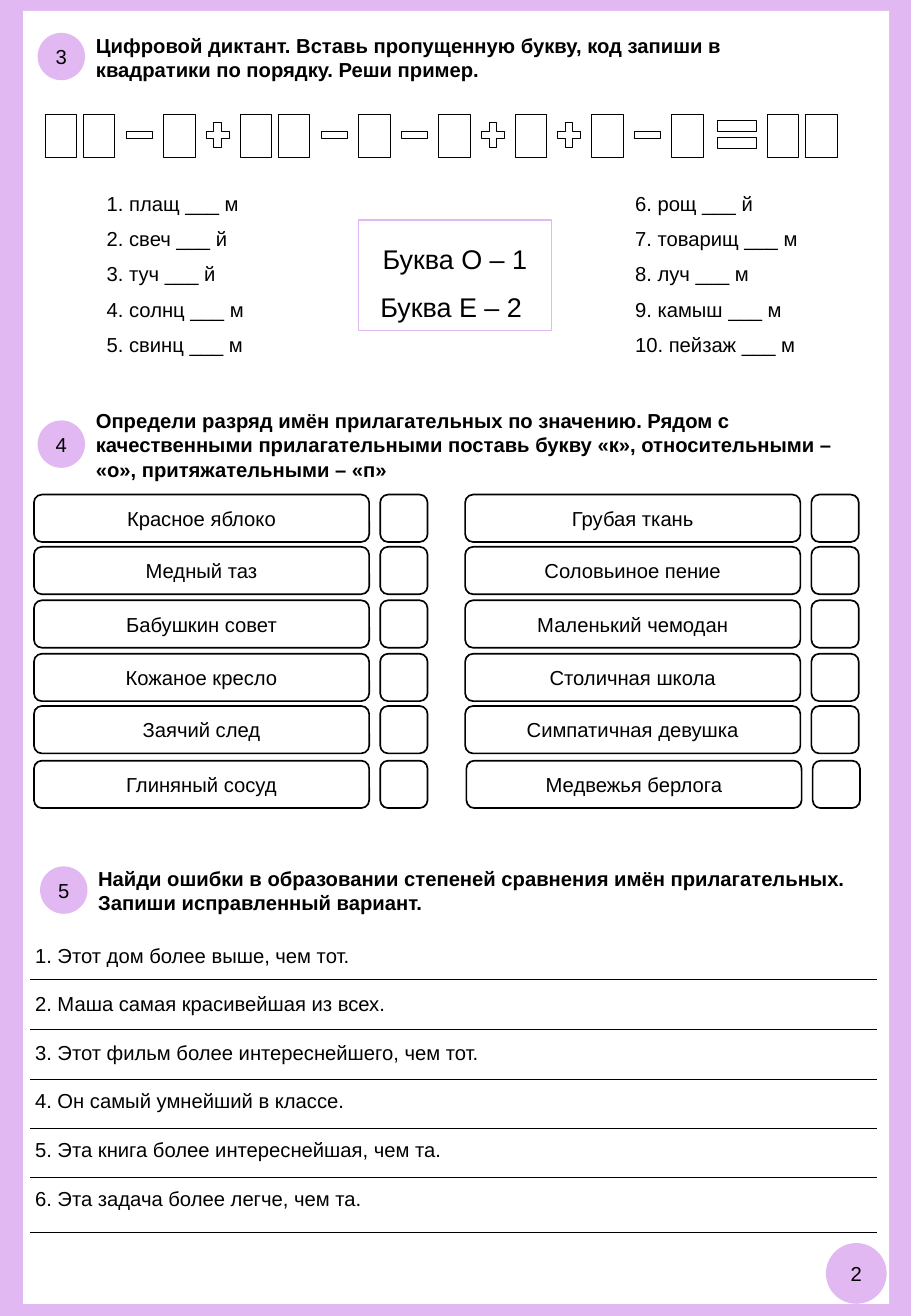
from dataclasses import dataclass

from lxml import etree
from pptx import Presentation
from pptx import util as u
from pptx.dml.color import RGBColor
from pptx.enum import shapes, text
from pptx.oxml import ns

HEADINGS = [
    ("3", (31, 27), (69, 22, 585, 50),
     "Цифровой диктант. Вставь пропущенную букву, код запиши в квадратики по порядку. Реши пример."),
    ("4", (31, 346), (69, 331, 661, 71),
     "Определи разряд имён прилагательных по значению. Рядом с качественными прилагательными "
     "поставь букву «к», относительными – «о», притяжательными – «п»"),
    ("5", (33, 713), (71, 708, 661, 50),
     "Найди ошибки в образовании степеней сравнения имён прилагательных. Запиши исправленный вариант."),
]
EQUATION = "□□-□+□□-□-□+□+□-□=□□"
LETTER_CODES = ["Буква О – 1", "Буква Е – 2 "]
WORD_COLUMNS = [
    ((78, 143, 201, 157),
     ["1. плащ ___ м", "2. свеч ___ й", "3. туч ___ й", "4. солнц ___ м", "5. свинц ___ м"]),
    ((513, 143, 231, 157),
     ["6. рощ ___ й", "7. товарищ ___ м", "8. луч ___ м", "9. камыш ___ м", "10. пейзаж ___ м"]),
]
PHRASE_ROWS = [
    (407, 383, "Красное яблоко", "Грубая ткань"),
    (450, 383, "Медный таз", "Соловьиное пение"),
    (494, 383, "Бабушкин совет", "Маленький чемодан"),
    (538, 383, "Кожаное кресло", "Столичная школа"),
    (581, 383, "Заячий след", "Симпатичная девушка"),
    (626, 384, "Глиняный сосуд", "Медвежья берлога"),
]
SENTENCES = [
    "1. Этот дом более выше, чем тот.",
    "2. Маша самая красивейшая из всех.",
    "3. Этот фильм более интереснейшего, чем тот.",
    "4. Он самый умнейший в классе.",
    "5. Эта книга более интереснейшая, чем та.",
    "6. Эта задача более легче, чем та.",
]
ANSWER_LINES = [806, 847, 888, 929, 969, 1014]
PAGE_NUMBER = "2"


@dataclass(frozen=True)
class Theme:
    lilac: RGBColor = RGBColor(0xE1, 0xB8, 0xF2)
    white: RGBColor = RGBColor(0xFF, 0xFF, 0xFF)
    black: RGBColor = RGBColor(0, 0, 0)
    font: str = "Arial"
    body: int = 12
    code: int = 16


THEME = Theme()
PX = 9144
KIND = shapes.MSO_SHAPE
SYMBOLS = {
    "□": (KIND.RECTANGLE, 94, 26, 35, 5.5),
    "-": (KIND.MATH_MINUS, 98, 29, 26, 5.5),
    "+": (KIND.MATH_PLUS, 97, 26, 28, 5.5),
    "=": (KIND.MATH_EQUAL, 91, 44, 39, 3),
}


def emu(*lengths):
    return [u.Emu(round(length * PX)) for length in lengths]


def write(shape, lines, size=THEME.body, bold=False, spacing=1.0,
          align=text.PP_ALIGN.LEFT, anchor=text.MSO_ANCHOR.TOP):
    frame = shape.text_frame
    frame.word_wrap = True
    frame.vertical_anchor = anchor
    frame.text = "\n".join(lines)
    for paragraph in frame.paragraphs:
        paragraph.alignment = align
        paragraph.line_spacing = spacing
        for run in paragraph.runs:
            run.font.name = THEME.font
            run.font.size = u.Pt(size)
            run.font.bold = bold
            run.font.color.rgb = THEME.black


def write_centred(shape, label):
    frame = shape.text_frame
    frame.margin_left = frame.margin_right = 0
    write(shape, [label], align=text.PP_ALIGN.CENTER, anchor=text.MSO_ANCHOR.MIDDLE)


def add_shape(slide, kind, box, fill=None, line=None, weight=1.0):
    shape = slide.shapes.add_shape(kind, *emu(*box))
    shape.shadow.inherit = False
    if fill is None:
        shape.fill.background()
    else:
        shape.fill.solid()
        shape.fill.fore_color.rgb = fill
    if line is None:
        shape.line.fill.background()
    else:
        shape.line.color.rgb = line
        shape.line.width = u.Pt(weight)
    return shape


def add_text(slide, box, lines, **style):
    shape = slide.shapes.add_textbox(*emu(*box))
    write(shape, lines, **style)
    shape.text_frame.auto_size = text.MSO_AUTO_SIZE.SHAPE_TO_FIT_TEXT


def add_badge(slide, left, top, size, label):
    badge = add_shape(slide, KIND.FLOWCHART_CONNECTOR, (left, top, size, size), THEME.lilac)
    write_centred(badge, label)


def add_headings(slide):
    for index, (number, (left, top), box, heading) in enumerate(HEADINGS):
        if index == 0:
            title = slide.shapes.title
            title.left, title.top, title.width, title.height = emu(*box)
            write(title, [heading], bold=True)
            title.text_frame.auto_size = text.MSO_AUTO_SIZE.NONE
        else:
            add_text(slide, box, [heading], bold=True)
        add_badge(slide, left, top, 39, number)


def add_dictation(slide):
    left = 37
    for symbol in EQUATION:
        kind, top, width, height, gap = SYMBOLS[symbol]
        add_shape(slide, kind, (left, top, width, height), THEME.white, THEME.black, 0.25)
        left += width + gap
    for box, words in WORD_COLUMNS:
        add_text(slide, box, words, spacing=u.Pt(21))
    codes = add_shape(slide, KIND.RECTANGLE, (295, 181, 159, 91), line=THEME.lilac, weight=0.75)
    write(codes, LETTER_CODES, THEME.code, spacing=1.5, align=text.PP_ALIGN.CENTER)


def add_phrases(slide):
    for top, right_column, *phrases in PHRASE_ROWS:
        for left, phrase in zip((28, right_column), phrases):
            card = add_shape(slide, KIND.ROUNDED_RECTANGLE, (left, top, 276, 39), line=THEME.black)
            write_centred(card, phrase)
            add_shape(slide, KIND.ROUNDED_RECTANGLE, (left + 285, top, 39, 39), line=THEME.black)


def add_sentences(slide):
    add_text(slide, (19, 751, 731, 252), SENTENCES, spacing=2.0)
    for top in ANSWER_LINES:
        line = slide.shapes.add_connector(shapes.MSO_CONNECTOR.STRAIGHT, *emu(25, top, 722, top))
        line.line.color.rgb = THEME.black
        line.line.width = u.Pt(0.5)
        etree.SubElement(line._element.spPr, ns.qn("a:effectLst"))


def main():
    presentation = Presentation()
    presentation.slide_width, presentation.slide_height = emu(750, 1083)
    slide = presentation.slides.add_slide(presentation.slide_layouts[5])
    slide.background.fill.solid()
    slide.background.fill.fore_color.rgb = THEME.lilac
    page = add_shape(slide, KIND.RECTANGLE, (19, 9, 713, 1064), THEME.white)
    slide.shapes.title._element.addprevious(page._element)
    add_badge(slide, 680, 1023, 50, PAGE_NUMBER)
    add_headings(slide)
    add_dictation(slide)
    add_phrases(slide)
    add_sentences(slide)
    presentation.save("out.pptx")


if __name__ == "__main__":
    main()
